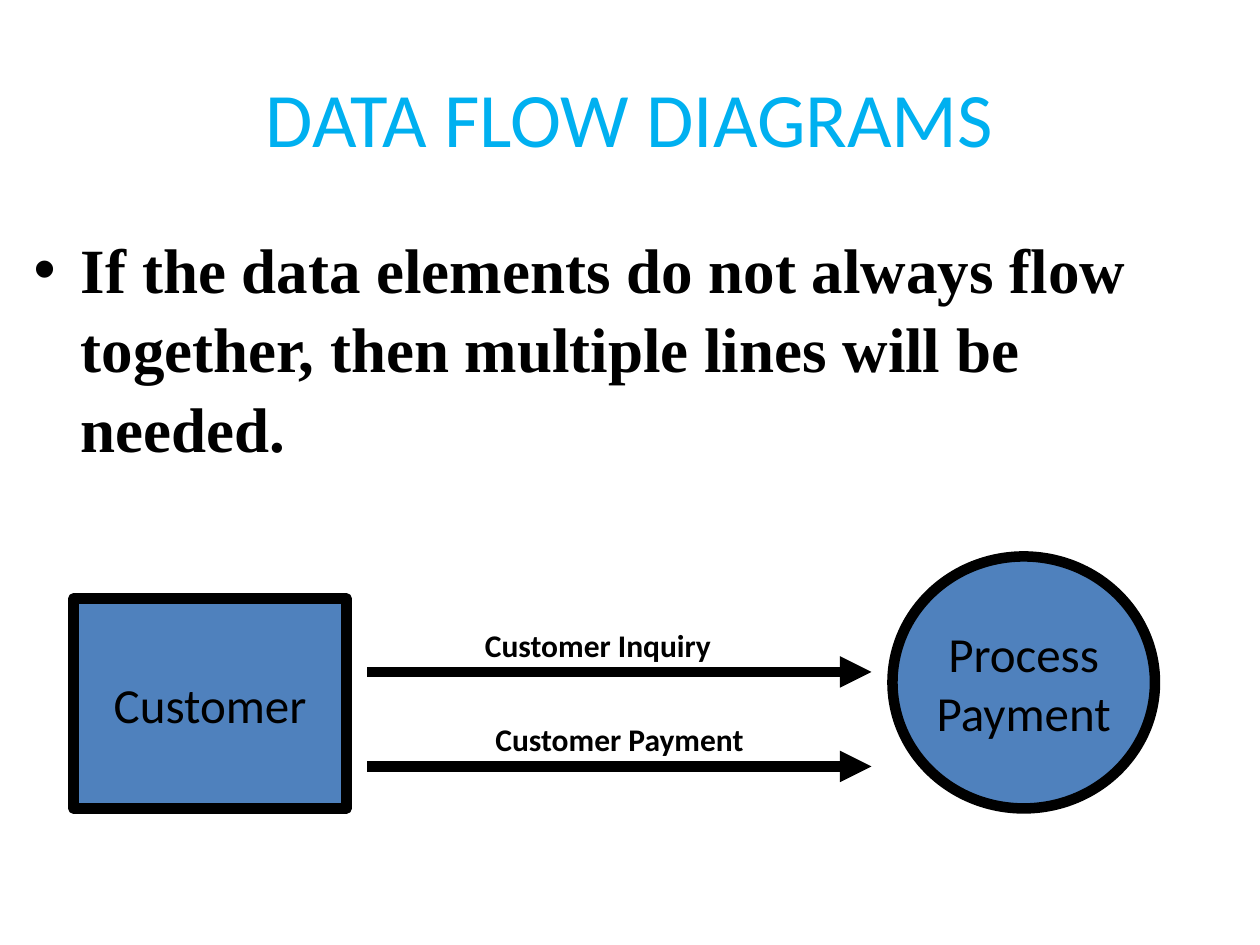
from dataclasses import dataclass

from lxml import etree
from pptx import Presentation
from pptx.dml.color import RGBColor
from pptx.enum.shapes import MSO_CONNECTOR, MSO_SHAPE
from pptx.enum.text import MSO_ANCHOR, MSO_AUTO_SIZE, PP_ALIGN
from pptx.oxml.ns import qn
from pptx.util import Inches, Pt

RECTANGLE, OVAL = MSO_SHAPE.RECTANGLE, MSO_SHAPE.OVAL
STRAIGHT = MSO_CONNECTOR.STRAIGHT
MIDDLE, CENTER = MSO_ANCHOR.MIDDLE, PP_ALIGN.CENTER
NO_FIT, GROW = MSO_AUTO_SIZE.NONE, MSO_AUTO_SIZE.SHAPE_TO_FIT_TEXT


@dataclass(frozen=True)
class Theme:
    title: RGBColor = RGBColor(0x00, 0xB0, 0xF0)
    ink: RGBColor = RGBColor(0x00, 0x00, 0x00)
    node: RGBColor = RGBColor(0x4F, 0x81, 0xBD)
    sans: str = "Calibri"
    serif: str = "Times New Roman"
    title_size: int = 44
    body_size: int = 36
    node_size: int = 28
    label_size: int = 18
    stroke: int = 6


THEME = Theme()
COLUMNS, ROWS = 120, 90  # square grid cells over the slide
CELL = Inches(10) / COLUMNS


def grid(*cells):
    """Turn grid columns and rows into slide lengths."""
    return [round(cell * CELL) for cell in cells]


def place(shape, box):
    shape.left, shape.top, shape.width, shape.height = grid(*box)


def write(frame, text, size, color=THEME.ink, name=THEME.sans, bold=False, align=None):
    frame.text = text
    for para in frame.paragraphs:
        para.alignment = align
        for span in para.runs:
            span.font.size = Pt(size)
            span.font.name = name
            span.font.bold = bold
            span.font.color.rgb = color


def add_title(page, box, text):
    title = page.shapes.title
    place(title, box)
    title.text_frame.auto_size = NO_FIT
    title.text_frame.vertical_anchor = MIDDLE
    write(title.text_frame, text, THEME.title_size, THEME.title, align=CENTER)


def add_body(page, box, text):
    body = page.placeholders[1]
    place(body, box)
    frame = body.text_frame
    frame.auto_size = NO_FIT
    write(frame, text, THEME.body_size, name=THEME.serif, bold=True)
    frame.paragraphs[0].space_before = Pt(0)
    frame.paragraphs[0].line_spacing = 1.05


def add_node(page, kind, box, text):
    node = page.shapes.add_shape(kind, *grid(*box))
    node.shadow.inherit = False
    node.fill.solid()
    node.fill.fore_color.rgb = THEME.node
    node.line.color.rgb = THEME.ink
    node.line.width = Pt(THEME.stroke)
    node.text_frame.word_wrap = False
    node.text_frame.vertical_anchor = MIDDLE
    write(node.text_frame, text, THEME.node_size, align=CENTER)


def add_flow(page, box, indent, label_width, text):
    """Draw an arrow along the bottom of the box, with its label above."""
    left, top, width, height = box
    base = top + height
    arrow = page.shapes.add_connector(STRAIGHT, *grid(left, base, left + width, base))
    arrow.line.color.rgb = THEME.ink
    arrow.line.width = Pt(THEME.stroke)
    outline = arrow.line._get_or_add_ln()
    etree.SubElement(outline, qn("a:tailEnd"), type="triangle")
    etree.SubElement(arrow._element.spPr, qn("a:effectLst"))

    label = page.shapes.add_textbox(*grid(left + indent, top, label_width, 4.8))
    label.text_frame.word_wrap = False
    label.text_frame.auto_size = GROW
    write(label.text_frame, text, THEME.label_size, bold=True)


def add_diagram(page, box):
    left, top, width, height = box
    # Source and process
    add_node(page, RECTANGLE, (left, top + 4, 26, height - 4), "Customer")
    add_node(page, OVAL, (left + width - 25, top, 25, height), "Process\nPayment")
    # Data flows between them
    flows = [("Customer Inquiry", 10, 24.1), ("Customer Payment", 11, 26.3)]
    for index, (text, indent, label_width) in enumerate(flows):
        flow_box = (left + 28, top + 6 + 9 * index, 48, 5)
        add_flow(page, flow_box, indent, label_width, text)


def main():
    deck = Presentation()
    deck.slide_width, deck.slide_height = grid(COLUMNS, ROWS)
    page = deck.slides.add_slide(deck.slide_layouts[1])
    add_title(page, (6, 3.6, 108, 15), "DATA FLOW DIAGRAMS")
    add_body(page, (2, 21, 116, 21),
             "If the data elements do not always flow together, "
             "then multiple lines will be needed.")
    add_diagram(page, (7, 53, 103, 24))
    deck.save("out.pptx")


if __name__ == "__main__":
    main()
